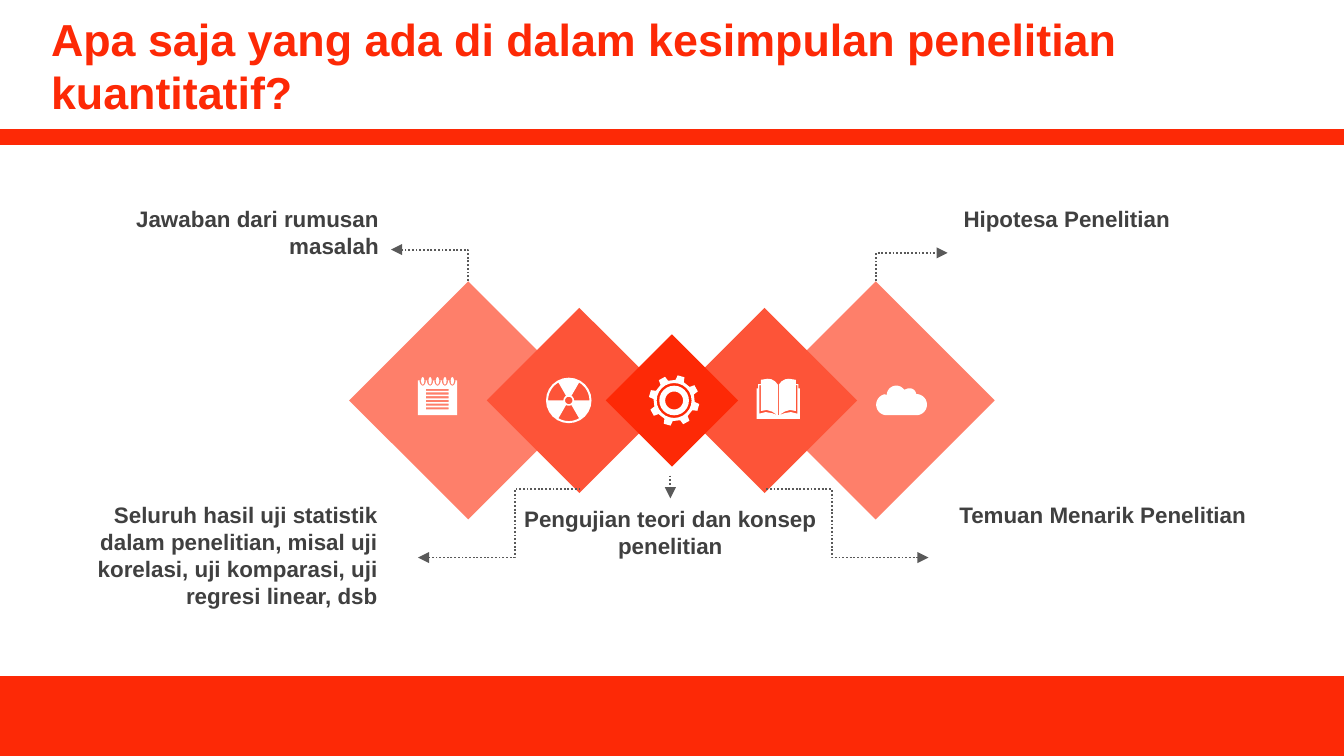
import math

from lxml import etree
from pptx import Presentation
from pptx.dml.color import RGBColor
from pptx.enum.dml import MSO_LINE
from pptx.enum.shapes import MSO_CONNECTOR, MSO_SHAPE
from pptx.enum.text import MSO_ANCHOR, MSO_AUTO_SIZE, PP_ALIGN
from pptx.oxml.ns import qn
from pptx.util import Cm, Pt

RED = RGBColor(0xFD, 0x29, 0x06)
ORANGE = RGBColor(0xFD, 0x54, 0x38)
SALMON = RGBColor(0xFE, 0x7F, 0x6A)
WHITE = RGBColor(0xFF, 0xFF, 0xFF)
TEXT_GREY = RGBColor(0x40, 0x40, 0x40)
LINE_GREY = RGBColor(0x59, 0x59, 0x59)

RECTANGLE, DIAMOND = MSO_SHAPE.RECTANGLE, MSO_SHAPE.DIAMOND
STRAIGHT, ELBOW = MSO_CONNECTOR.STRAIGHT, MSO_CONNECTOR.ELBOW
LEFT, CENTER, RIGHT = PP_ALIGN.LEFT, PP_ALIGN.CENTER, PP_ALIGN.RIGHT
MIDDLE = MSO_ANCHOR.MIDDLE
GROW = MSO_AUTO_SIZE.SHAPE_TO_FIT_TEXT
DOTTED = MSO_LINE.ROUND_DOT

SLIDE_WIDTH, SLIDE_HEIGHT = 25.4, 14.29
CENTER_X, CENTER_Y = 12.7, 7.57


class SlideBuilder:
    font = "Arial"

    def __init__(self, slide):
        self.slide = slide
        self.shapes = slide.shapes

    def fill_text(self, frame, text, size, color, alignment):
        frame.word_wrap = True
        paragraph = frame.paragraphs[0]
        paragraph.alignment = alignment
        run = paragraph.add_run()
        run.text = text
        run.font.name, run.font.size, run.font.bold = self.font, Pt(size), True
        run.font.color.rgb = color

    def title(self, text, left, top, width, height):
        title = self.shapes.title
        title.left, title.top = Cm(left), Cm(top)
        title.width, title.height = Cm(width), Cm(height)
        title.text_frame.vertical_anchor = MIDDLE
        self.fill_text(title.text_frame, text, 24, RED, LEFT)

    def label(self, text, left, top, height, alignment):
        box = self.shapes.add_textbox(Cm(left), Cm(top), Cm(6.5), Cm(height))
        self.fill_text(box.text_frame, text, 12, TEXT_GREY, alignment)
        box.text_frame.auto_size = GROW

    def paint(self, shape, color):
        shape.shadow.inherit = False
        shape.fill.solid()
        shape.fill.fore_color.rgb = color
        shape.line.fill.background()

    def shape(self, kind, left, top, width, height, color):
        shape = self.shapes.add_shape(kind, Cm(left), Cm(top), Cm(width), Cm(height))
        self.paint(shape, color)

    def icon(self, center_x, center_y, contours):
        """Draw closed contours around a centre; nested contours make holes."""
        contours = [[(Cm(center_x + x), Cm(center_y + y)) for x, y in contour]
                    for contour in contours]
        builder = self.shapes.build_freeform(*contours[0][0])
        for contour in contours:
            builder.move_to(*contour[0])
            builder.add_line_segments(contour[1:], close=True)
        self.paint(builder.convert_to_shape(), WHITE)

    def arrow(self, kind, x1, y1, x2, y2):
        connector = self.shapes.add_connector(kind, Cm(x1), Cm(y1), Cm(x2), Cm(y2))
        connector.line.width = Pt(1)
        connector.line.color.rgb = LINE_GREY
        connector.line.dash_style = DOTTED
        properties = connector.element.spPr
        etree.SubElement(properties.find(qn("a:ln")), qn("a:tailEnd"), type="triangle")
        etree.SubElement(properties, qn("a:effectLst"))
        return properties

    def step_arrow(self, x1, y1, x2, y2):
        """Go sideways, down, then sideways again."""
        geometry = self.arrow(ELBOW, x1, y1, x2, y2).find(qn("a:prstGeom"))
        guides = geometry.find(qn("a:avLst"))
        etree.SubElement(guides, qn("a:gd"), name="adj1", fmla="val 40500")

    def corner_arrow(self, x1, y1, x2, y2):
        """Go up, then sideways: a one-bend connector turned by 270 degrees."""
        middle_x, middle_y = (x1 + x2) / 2, (y1 + y2) / 2
        half_rise, half_run = (y1 - y2) / 2, (x2 - x1) / 2
        properties = self.arrow(ELBOW, middle_x - half_rise, middle_y - half_run,
                                middle_x + half_rise, middle_y + half_run)
        properties.find(qn("a:xfrm")).set("rot", str(270 * 60000))
        properties.find(qn("a:prstGeom")).set("prst", "bentConnector2")


def arc(x, y, radius_x, radius_y, start=0, end=360, steps=24):
    angles = [math.radians(start + (end - start) * i / steps) for i in range(steps + 1)]
    return [(x + radius_x * math.cos(a), y + radius_y * math.sin(a)) for a in angles]


def circle(radius):
    return arc(0, 0, radius, radius)


def box(left, top, right, bottom):
    return [(left, top), (right, top), (right, bottom), (left, bottom)]


def notepad():
    contours = [box(-0.37, -0.3, 0.37, 0.36)]
    for row in range(6):
        y = -0.12 + 0.07 * row
        contours.append(box(-0.22, y - 0.02, 0.21, y + 0.02))
    for column in range(-2, 3):
        x = 0.14 * column
        contours.append(arc(x, -0.3, 0.06, 0.1, 0, 180))
        contours.append(arc(x, -0.29, 0.03, 0.07))
    return contours


def radiation():
    wedges = [arc(0, 0, 0.1, 0.1, start, start + 60)
              + arc(0, 0, 0.39, 0.39, start + 60, start) for start in (60, 180, 300)]
    return [circle(0.43), circle(0.07)] + wedges


def gear():
    outline = []
    for tooth in range(8):
        for radius, offset in ((0.39, -12), (0.48, -8), (0.48, 8), (0.39, 12)):
            angle = math.radians(16 + 45 * tooth + offset)
            outline.append((radius * math.cos(angle), radius * math.sin(angle)))
    return [outline, circle(0.33), circle(0.28), circle(0.17)]


def book():
    cover = [(0.01, -0.27), (0.06, -0.33), (0.13, -0.37), (0.2, -0.38), (0.33, -0.36),
             (0.33, -0.28), (0.38, -0.28), (0.38, -0.2), (0.41, -0.2), (0.41, 0.38),
             (0, 0.38), (0, 0.31), (0.01, 0.31)]
    page_edge = [(0.33, -0.26), (0.36, -0.26), (0.36, 0.28), (0.24, 0.25), (0.12, 0.27),
                 (0.01, 0.31), (0.12, 0.24), (0.22, 0.21), (0.33, 0.23)]
    return [[(side * x, y) for x, y in contour]
            for side in (-1, 1) for contour in (cover, page_edge)]


def cloud():
    return [arc(-0.28, 0.08, 0.2, 0.2, 90, 260) + arc(-0.1, -0.1, 0.18, 0.18, 180, 325)
            + arc(0.15, -0.1, 0.13, 0.13, 240, 350) + arc(0.28, 0.08, 0.2, 0.2, 270, 450)]


def main():
    presentation = Presentation()
    presentation.slide_width, presentation.slide_height = Cm(SLIDE_WIDTH), Cm(SLIDE_HEIGHT)
    builder = SlideBuilder(presentation.slides.add_slide(presentation.slide_layouts[5]))

    # Bars and title
    builder.shape(RECTANGLE, 0, 12.78, SLIDE_WIDTH, 1.51, RED)
    builder.shape(RECTANGLE, 0, 2.44, SLIDE_WIDTH, 0.3, RED)
    builder.title("Apa saja yang ada di dalam kesimpulan penelitian kuantitatif?",
                  0.71, 0, 24.69, 2.46)

    # Diamonds, mirrored about the slide centre
    for offset, size, color in ((3.85, 4.5, SALMON), (-3.85, 4.5, SALMON),
                                (1.75, 3.5, ORANGE), (-1.75, 3.5, ORANGE), (0, 2.5, RED)):
        builder.shape(DIAMOND, CENTER_X + offset - size / 2, CENTER_Y - size / 2,
                      size, size, color)

    # Icons
    builder.icon(14.71, 7.54, book())
    builder.icon(17.04, CENTER_Y, cloud())
    builder.icon(8.27, 7.49, notepad())
    builder.icon(10.75, CENTER_Y, radiation())
    builder.icon(12.74, CENTER_Y, gear())

    # Labels
    for label in (
        ("Jawaban dari rumusan masalah", 0.91, 3.76, 1.27, RIGHT),
        ("Seluruh hasil uji statistik dalam penelitian, misal uji korelasi, "
         "uji komparasi, uji regresi linear, dsb", 0.89, 9.35, 2.31, RIGHT),
        ("Hipotesa Penelitian", 17.96, 3.76, 0.76, LEFT),
        ("Temuan Menarik Penelitian", 17.88, 9.35, 0.76, LEFT),
        ("Pengujian teori dan konsep penelitian", 9.42, 9.42, 1.27, CENTER),
    ):
        builder.label(*label)

    # Arrows from diamonds to labels
    builder.corner_arrow(8.84, 5.31, 7.39, 4.72)
    builder.corner_arrow(16.56, 5.31, 17.91, 4.78)
    builder.arrow(STRAIGHT, 12.67, 8.99, 12.67, 9.42)
    builder.step_arrow(10.97, 9.25, 7.9, 10.54)
    builder.step_arrow(14.48, 9.25, 17.55, 10.54)

    presentation.save("out.pptx")


if __name__ == "__main__":
    main()
